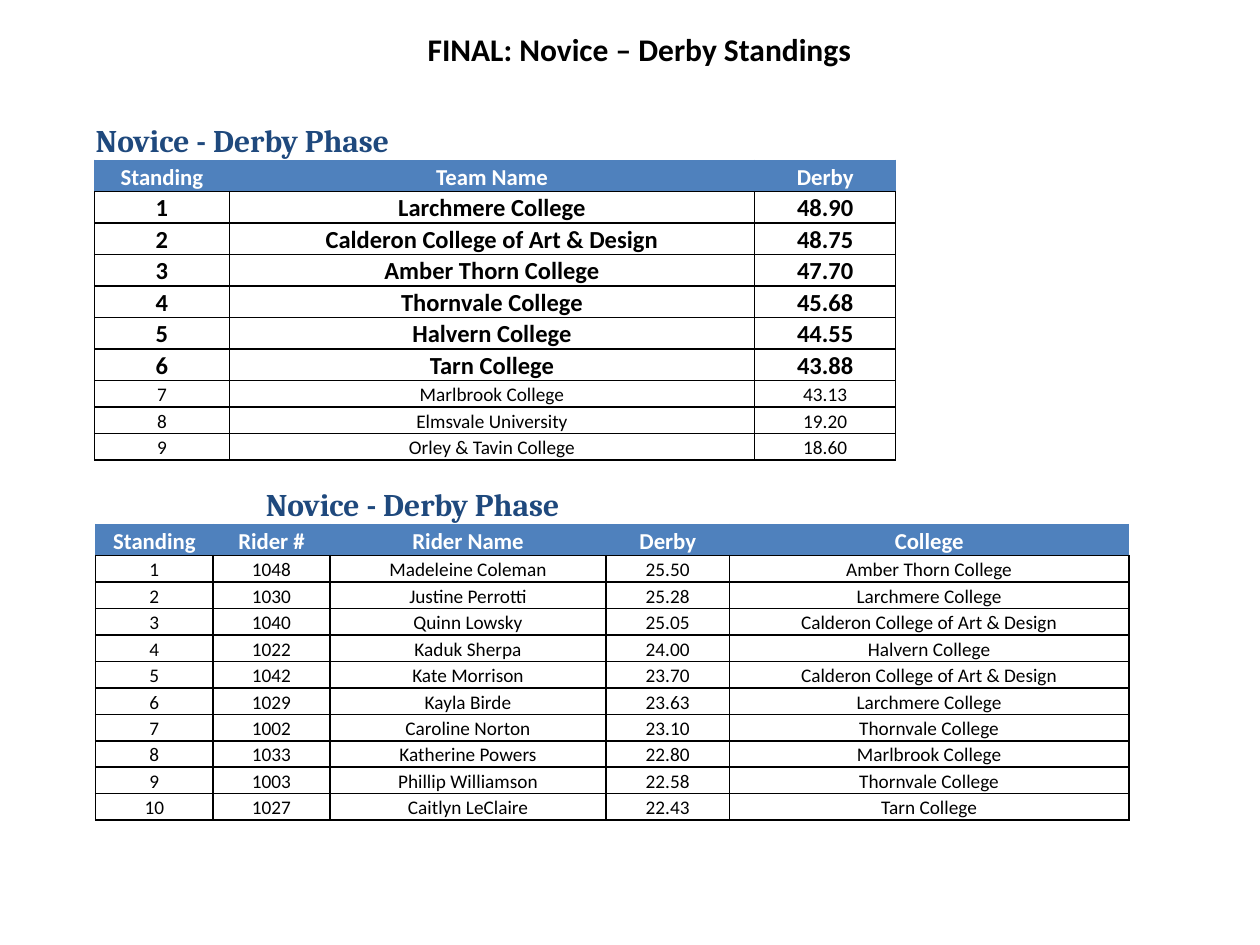
from lxml.etree import SubElement
from pptx import Presentation
from pptx.dml.color import RGBColor
from pptx.enum.text import MSO_ANCHOR, PP_ALIGN
from pptx.oxml.ns import qn
from pptx.util import Pt

PX = 9144  # 100 px to the inch
BLACK, WHITE, BLUE, NAVY = "000000", "FFFFFF", "4F81BD", "1F497D"
LEFT, MID = PP_ALIGN.LEFT, PP_ALIGN.CENTER
HEAD = "Novice - Derby Phase"

TEAMS = [
    ("Standing", "Team Name", "Derby"),
    ("1", "Larchmere College", "48.90"),
    ("2", "Calderon College of Art & Design", "48.75"),
    ("3", "Amber Thorn College", "47.70"),
    ("4", "Thornvale College", "45.68"),
    ("5", "Halvern College", "44.55"),
    ("6", "Tarn College", "43.88"),
    ("7", "Marlbrook College", "43.13"),
    ("8", "Elmsvale University", "19.20"),
    ("9", "Orley & Tavin College", "18.60"),
]
RIDERS = [
    ("Standing", "Rider #", "Rider Name", "Derby", "College"),
    ("1", "1048", "Madeleine Coleman", "25.50", "Amber Thorn College"),
    ("2", "1030", "Justine Perrotti", "25.28", "Larchmere College"),
    ("3", "1040", "Quinn Lowsky", "25.05", "Calderon College of Art & Design"),
    ("4", "1022", "Kaduk Sherpa", "24.00", "Halvern College"),
    ("5", "1042", "Kate Morrison", "23.70", "Calderon College of Art & Design"),
    ("6", "1029", "Kayla Birde", "23.63", "Larchmere College"),
    ("7", "1002", "Caroline Norton", "23.10", "Thornvale College"),
    ("8", "1033", "Katherine Powers", "22.80", "Marlbrook College"),
    ("9", "1003", "Phillip Williamson", "22.58", "Thornvale College"),
    ("10", "1027", "Caitlyn LeClaire", "22.43", "Tarn College"),
]


def color(code):
    return RGBColor.from_string(code)


def write(frame, text, size=11, bold=False, ink=BLACK, font="Calibri", align=MID):
    para = frame.paragraphs[0]
    para.alignment = align
    run = para.add_run()
    run.text = text
    run.font.name = font
    run.font.size = Pt(size)
    run.font.bold = bold
    run.font.color.rgb = color(ink)


def edge(cell, **sides):
    """Draw each side (L, R, T, B) in its (colour, points), or hide it if absent."""
    props = cell._tc.get_or_add_tcPr()
    for side in "LRTB":
        line = SubElement(props, qn("a:ln" + side))
        if side in sides:
            code, width = sides[side]
            line.set("w", str(Pt(width)))
            fill = SubElement(line, qn("a:solidFill"))
            SubElement(fill, qn("a:srgbClr")).set("val", code)
        else:
            line.set("w", "0")
            SubElement(line, qn("a:noFill"))


class Deck:
    thin, rule = (BLUE, 0.5), (BLACK, 1)

    def __init__(self, wide, high):
        self.prs = Presentation()
        self.prs.slide_width, self.prs.slide_height = wide * PX, high * PX
        self.slide = self.prs.slides.add_slide(self.prs.slide_layouts[6])

    def title(self, text, *box):
        frame = self.slide.shapes.add_textbox(*(n * PX for n in box)).text_frame
        frame.word_wrap = True
        write(frame, text, size=18, bold=True)

    def cell(self, cell, text, fill=None, sides=None, **style):
        cell.margin_left = cell.margin_right = cell.margin_top = PX
        cell.margin_bottom = 0
        cell.vertical_anchor = MSO_ANCHOR.BOTTOM
        edge(cell, **(sides or {}))
        if fill:
            cell.fill.solid()
            cell.fill.fore_color.rgb = color(fill)
        else:
            cell.fill.background()
        if text:
            write(cell.text_frame, text, **style)

    def table(self, left, top, cols, rows, span, align, top_rows=0):
        """Place a heading over span columns, a header row, then the data."""
        highs = [31, 25] + [25 if n < top_rows else 21 for n in range(len(rows) - 1)]
        table = self.slide.shapes.add_table(
            len(highs), len(cols), left * PX, top * PX,
            sum(cols) * PX, sum(highs) * PX).table
        table.first_row = table.horz_banding = False
        for col, wide in zip(table.columns, cols):
            col.width = wide * PX
        for row, high in zip(table.rows, highs):
            row.height = high * PX

        for c in range(len(cols)):
            self.cell(table.cell(0, c), "" if c else HEAD, sides={"B": self.thin},
                      size=18, bold=True, ink=NAVY, font="Cambria", align=align)
        table.cell(0, 0).merge(table.cell(0, span - 1))

        names = {**dict.fromkeys("LRT", self.thin), "B": self.rule}
        grid = dict.fromkeys("LRTB", self.rule)
        for r, row in enumerate(rows):
            best = r <= top_rows
            for c, text in enumerate(row):
                cell = table.cell(r + 1, c)
                if r == 0:
                    self.cell(cell, text, BLUE, names, size=13, bold=True, ink=WHITE)
                else:
                    self.cell(cell, text, sides=grid, size=14 if best else 11, bold=best)


def main():
    deck = Deck(1000, 750)
    deck.title("FINAL: Novice – Derby Standings", 129, 19, 757, 40)
    deck.table(76, 385, (93, 93, 219, 98, 317), RIDERS, span=4, align=MID)
    deck.table(75, 96, (107, 417, 112), TEAMS, span=3, align=LEFT, top_rows=6)
    deck.prs.save("out.pptx")


if __name__ == "__main__":
    main()
